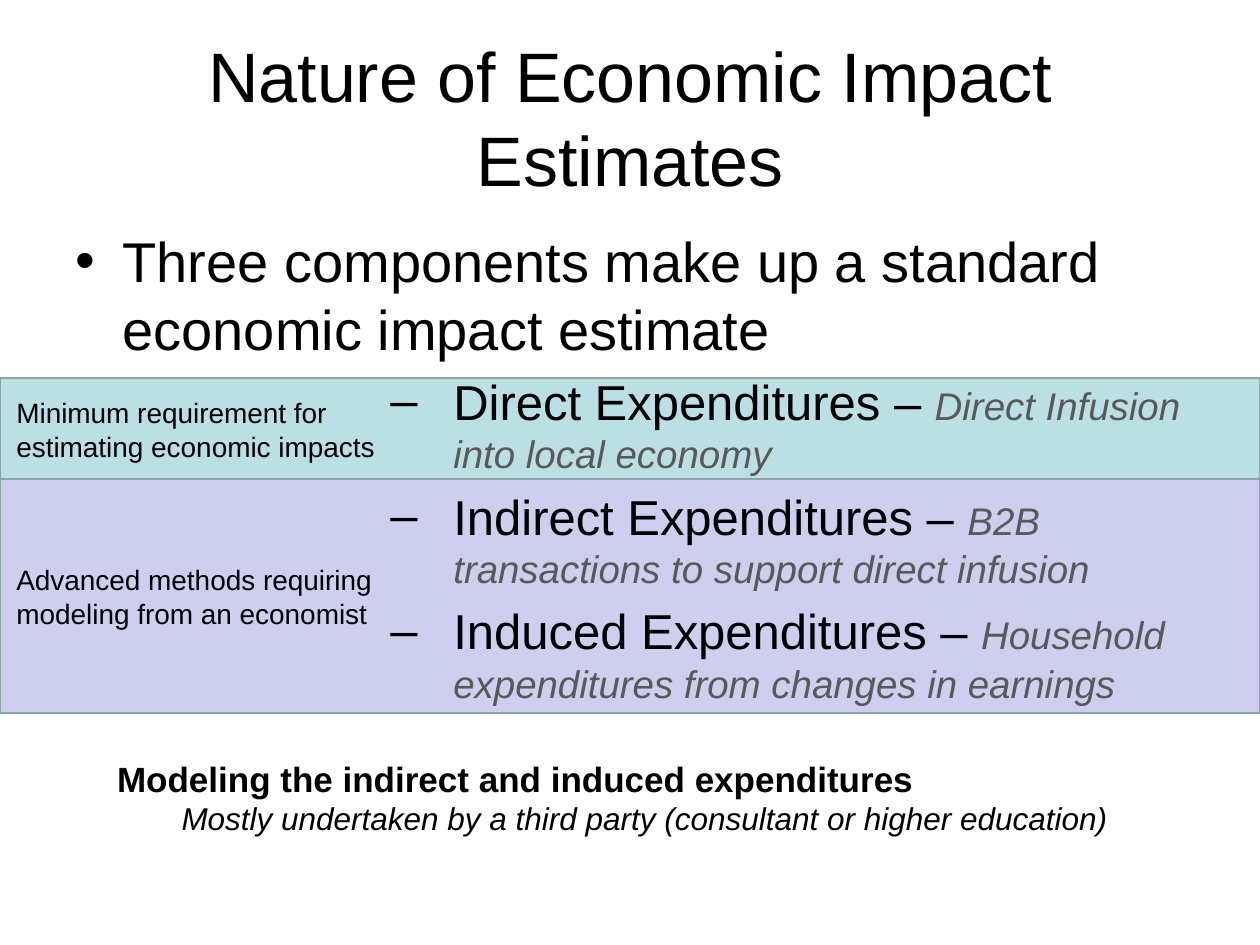
from dataclasses import dataclass, field
from typing import Any

from lxml.etree import SubElement
from pptx import Presentation
from pptx.dml.color import RGBColor
from pptx.enum.shapes import MSO_SHAPE
from pptx.enum.text import MSO_ANCHOR, PP_ALIGN
from pptx.oxml.ns import qn
from pptx.util import Cm, Pt

BLACK = RGBColor(0x00, 0x00, 0x00)
GRAY = RGBColor(0x59, 0x59, 0x59)
TEAL = RGBColor(0xBB, 0xE0, 0xE3)
LAVENDER = RGBColor(0xCE, 0xCE, 0xEF)
OUTLINE = RGBColor(0x8A, 0xA6, 0xA8)

SLIDE_WIDTH, SLIDE_HEIGHT = 25.4, 19.05


@dataclass(frozen=True)
class Run:
    text: str
    size: int
    color: RGBColor = BLACK
    style: dict[str, Any] = field(default_factory=dict)


@dataclass(frozen=True)
class Line:
    runs: list[Run]
    bullet: str = ""
    margin: float = 0
    indent: float = 0
    level: int = 0
    align: PP_ALIGN = PP_ALIGN.LEFT


@dataclass(frozen=True)
class Band:
    top: float
    height: float
    fill: RGBColor
    label: str
    label_top: float


@dataclass(frozen=True)
class Component:
    name: str
    meaning: str


BANDS = [
    Band(7.62, 2.03, TEAL,
         "Minimum requirement for estimating economic impacts", 7.98),
    Band(9.65, 4.72, LAVENDER,
         "Advanced methods requiring modeling from an economist", 11.35),
]
COMPONENTS = [
    Component("Direct", "Direct Infusion into local economy"),
    Component("Indirect", "B2B transactions to support direct infusion"),
    Component("Induced", "Household expenditures from changes in earnings"),
]
LABEL_FRAME = {"margin_left": Cm(0.25), "margin_top": 0,
               "margin_right": 0, "margin_bottom": 0}


def format_line(paragraph: Any, line: Line) -> None:
    for name, value in {"alignment": line.align, "level": line.level}.items():
        setattr(paragraph, name, value)
    properties = paragraph._p.get_or_add_pPr()
    properties.set("marL", str(Cm(line.margin)))
    properties.set("indent", str(Cm(line.indent)))
    if line.bullet:
        spacing = SubElement(properties, qn("a:spcBef"))
        SubElement(spacing, qn("a:spcPct")).set("val", "20000")
        SubElement(properties, qn("a:buFont")).set("typeface", "Arial")
        SubElement(properties, qn("a:buChar")).set("char", line.bullet)
    for part in line.runs:
        run = paragraph.add_run()
        run.text = part.text
        font_format = {"name": "Arial", "size": Pt(part.size), **part.style}
        for name, value in font_format.items():
            setattr(run.font, name, value)
        run.font.color.rgb = part.color


def add_text(shapes: Any, bounds: tuple[float, ...], lines: list[Line],
             frame_format: dict[str, Any]) -> None:
    frame = shapes.add_textbox(*map(Cm, bounds)).text_frame
    for name, value in {"word_wrap": True, **frame_format}.items():
        setattr(frame, name, value)
    for index, line in enumerate(lines):
        paragraph = frame.add_paragraph() if index else frame.paragraphs[0]
        format_line(paragraph, line)


def add_band(shapes: Any, band: Band) -> None:
    group = shapes.add_group_shape().shapes
    strip = group.add_shape(MSO_SHAPE.RECTANGLE, 0, Cm(band.top),
                            Cm(SLIDE_WIDTH), Cm(band.height))
    strip.shadow.inherit = False
    strip.fill.solid()
    strip.fill.fore_color.rgb = band.fill
    strip.line.color.rgb = OUTLINE
    strip.line.width = Pt(1)
    add_text(group, (0.08, band.label_top, 7.62, 1.37),
             [Line([Run(band.label, 16)])], LABEL_FRAME)


def component_line(component: Component) -> Line:
    return Line([Run(f"{component.name} Expenditures – ", 28),
                 Run(component.meaning, 22, GRAY, {"italic": True})],
                "–", 7.62, -1.27, 1)


def main() -> None:
    deck = Presentation()
    deck.slide_width, deck.slide_height = Cm(SLIDE_WIDTH), Cm(SLIDE_HEIGHT)
    shapes = deck.slides.add_slide(deck.slide_layouts[6]).shapes

    for band in BANDS:
        add_band(shapes, band)

    add_text(shapes, (1.27, 0.76, 22.86, 3.18),
             [Line([Run("Nature of Economic Impact Estimates", 40)],
                   align=PP_ALIGN.CENTER)],
             {"vertical_anchor": MSO_ANCHOR.MIDDLE})

    premise = "Three components make up a standard economic impact estimate"
    add_text(shapes, (1.27, 4.45, 22.86, 12.57),
             [Line([Run(premise, 32)], "•", 0.95, -0.95),
              *map(component_line, COMPONENTS)], {})

    add_text(shapes, (2.11, 15.14, 22.23, 2.64),
             [Line([Run("Modeling the indirect and induced expenditures", 20,
                        style={"bold": True})]),
              Line([Run("Mostly undertaken by a third party "
                        "(consultant or higher education)", 18,
                        style={"italic": True})], margin=1.3)], {})

    deck.save("out.pptx")


if __name__ == "__main__":
    main()
